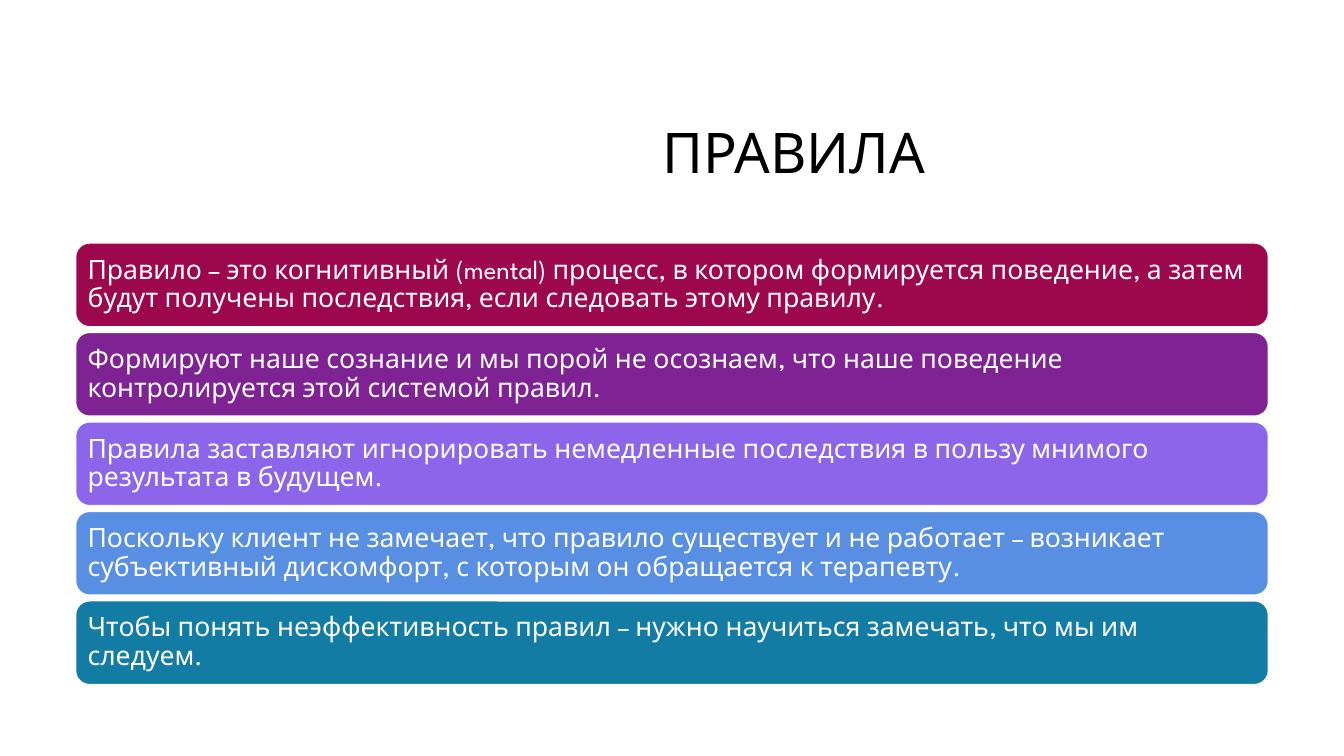
from pptx import Presentation
from pptx.dml.color import RGBColor
from pptx.enum.shapes import MSO_SHAPE
from pptx.enum.text import MSO_ANCHOR, PP_ALIGN
from pptx.util import Pt

ROUND = MSO_SHAPE.ROUNDED_RECTANGLE
MIDDLE = MSO_ANCHOR.MIDDLE
LEFT, CENTER = PP_ALIGN.LEFT, PP_ALIGN.CENTER

TITLE = "ПРАВИЛА"
RULES = [
    ("Правило – это когнитивный (mental) процесс, в котором формируется поведение, "
     "а затем будут получены последствия, если следовать этому правилу.", "9D074E"),
    ("Формируют наше сознание и мы порой не осознаем, что наше поведение "
     "контролируется этой системой правил.", "7F2294"),
    ("Правила заставляют игнорировать немедленные последствия в пользу мнимого "
     "результата в будущем.", "8D65EA"),
    ("Поскольку клиент не замечает, что правило существует и не работает – возникает "
     "субъективный дискомфорт, с которым он обращается к терапевту.", "588FE2"),
    ("Чтобы понять неэффективность правил – нужно научиться замечать, что мы им "
     "следуем.", "127CA4"),
]
THEME = {
    "font": "League Spartan",
    "title": (40, "000000"),
    "rule": (19, "FFFFFF"),
    "edge": "FFFFFF",
}
TITLE_BOX = (228, 60.5, 678, 101.5)
BAR_X, BAR_Y, BAR_W, BAR_H = 54, 173.6, 852, 59.8
PITCH = 63.9
INSET = 5.7


def color(code):
    return RGBColor.from_string(code)


def write(shape, text, style, align):
    """Fill the shape with one paragraph in the given theme style."""
    frame = shape.text_frame
    frame.word_wrap = True
    frame.vertical_anchor = MIDDLE
    para = frame.paragraphs[0]
    para.text = text
    para.alignment = align
    para.line_spacing = 0.9
    size, ink = THEME[style]
    para.font.name = THEME["font"]
    para.font.size = Pt(size)
    para.font.color.rgb = color(ink)


def add_bar(slide, row, text, fill):
    box = (BAR_X, BAR_Y + row * PITCH, BAR_W, BAR_H)
    bar = slide.shapes.add_shape(ROUND, *map(Pt, box))
    bar.shadow.inherit = False
    bar.fill.solid()
    bar.fill.fore_color.rgb = color(fill)
    bar.line.color.rgb = color(THEME["edge"])
    bar.line.width = Pt(1)
    frame = bar.text_frame
    frame.margin_left = frame.margin_right = Pt(INSET)
    frame.margin_top = frame.margin_bottom = Pt(INSET)
    write(bar, text, "rule", LEFT)


def main():
    deck = Presentation()
    deck.slide_width, deck.slide_height = Pt(960), Pt(540)
    slide = deck.slides.add_slide(deck.slide_layouts[6])
    title = slide.shapes.add_textbox(*map(Pt, TITLE_BOX))
    write(title, TITLE, "title", CENTER)
    for row, (text, fill) in enumerate(RULES):
        add_bar(slide, row, text, fill)
    deck.save("out.pptx")


if __name__ == "__main__":
    main()
